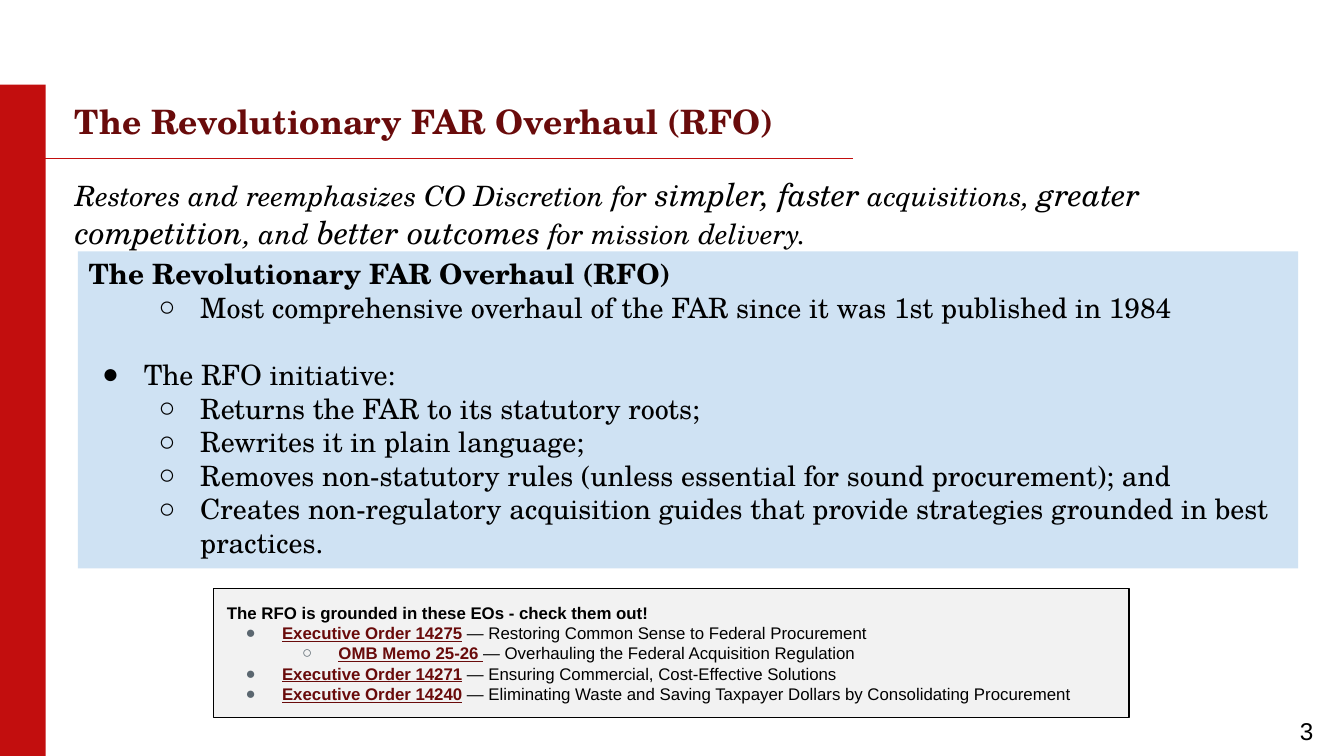
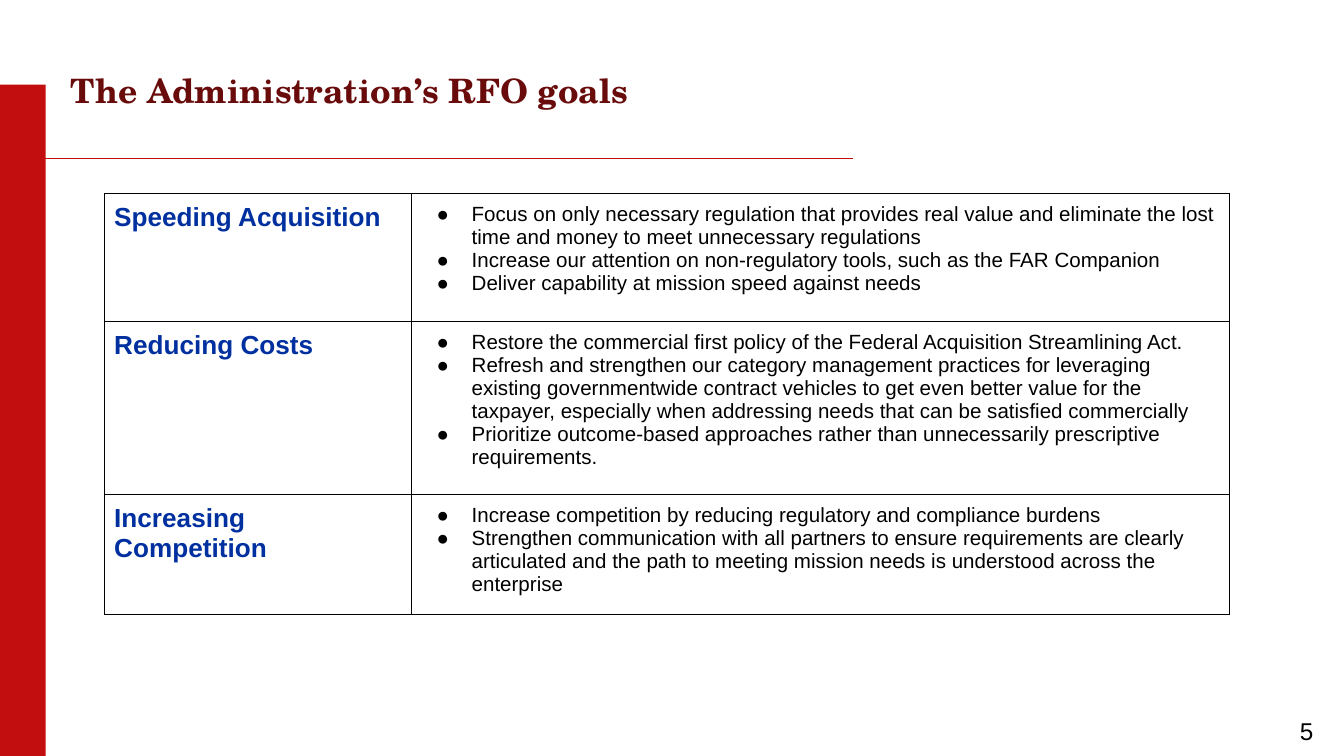
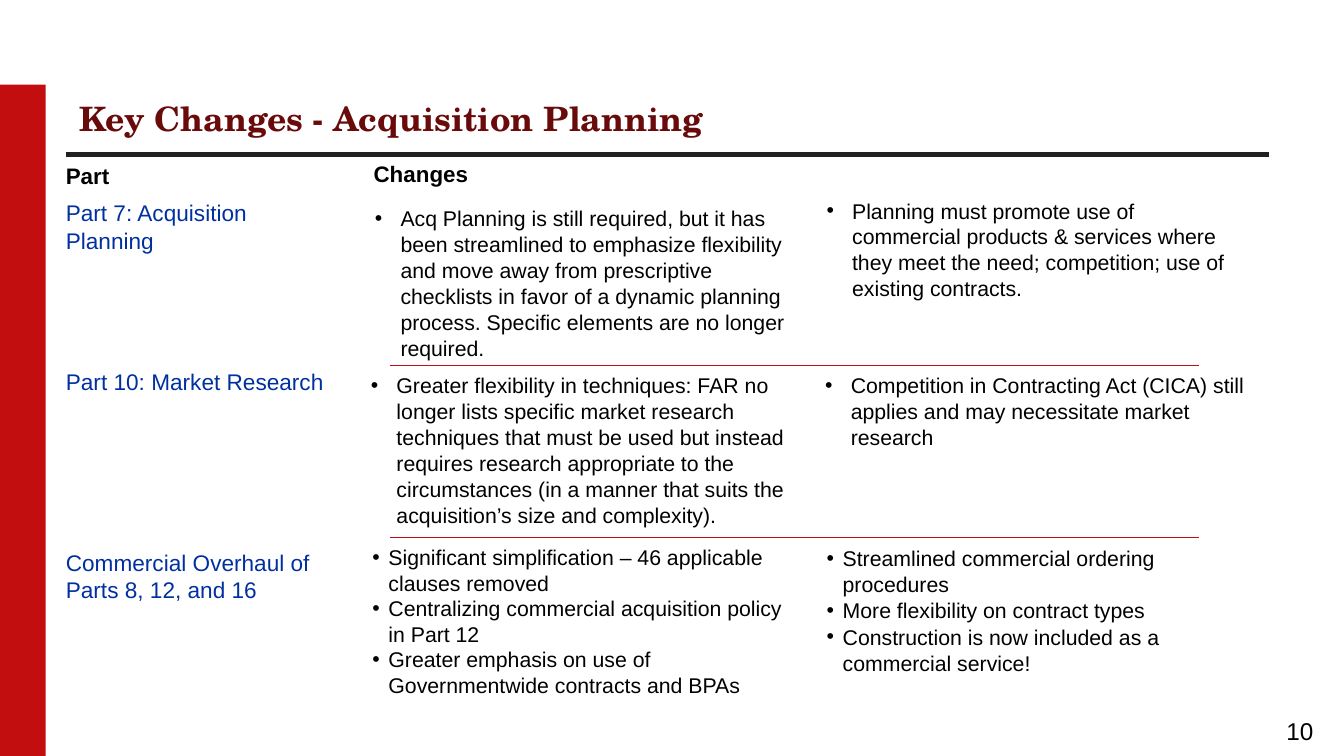
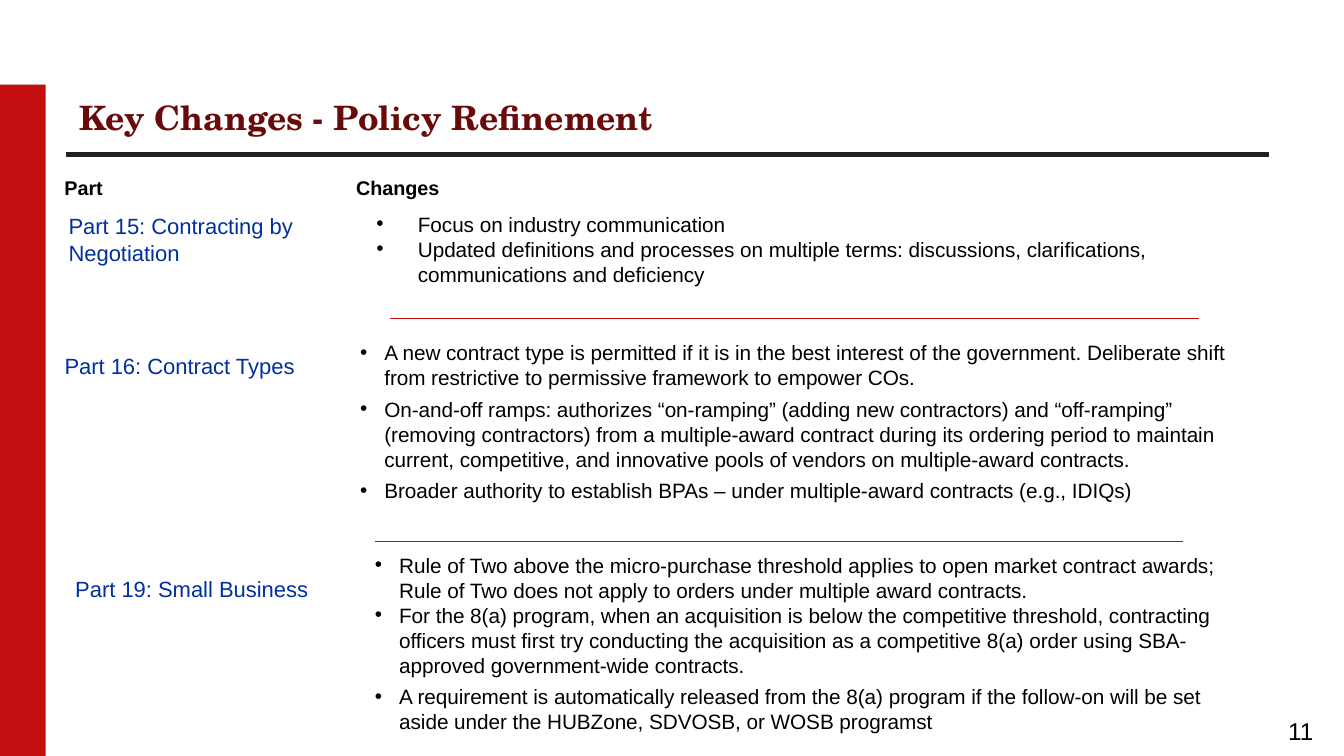
from dataclasses import dataclass

from lxml.etree import SubElement
from pptx import Presentation
from pptx.dml.color import RGBColor
from pptx.enum.shapes import MSO_CONNECTOR, MSO_SHAPE
from pptx.enum.text import MSO_ANCHOR, PP_ALIGN
from pptx.oxml.ns import qn
from pptx.util import Inches, Pt

SERIF, SANS = "TeX Gyre Schola", "Arial"
BLACK, RED, MAROON, BLUE = "000000", "C20E0E", "690B0B", "00309F"
SKY, MIST, SLATE, CHARCOAL = "CFE2F3", "F2F2F2", "5B6770", "212121"
TITLE_INSETS = (0.1, 0.1, 0.1, 0.1)
TIGHT = (0, 0, 0, 0)
LABEL_INSETS = (0, 0.01, 0, 0)


@dataclass
class Run:
    text: str
    size: float
    color: str = BLACK
    face: str = SANS
    bold: bool = False
    italic: bool = False
    underline: bool = False


@dataclass
class Para:
    runs: list
    bullet: str = ""
    left: float = 0
    hang: float = 0
    spacing: float = 0
    before: float = 0
    level: int = 0
    bullet_color: str = BLACK
    align: PP_ALIGN = PP_ALIGN.LEFT


def rgb(color):
    return RGBColor.from_string(color)


def add_bullet(paragraph, para):
    props = paragraph._p.get_or_add_pPr()
    props.set("marL", str(Inches(para.left)))
    props.set("indent", str(Inches(-para.hang)))
    tint = SubElement(props, qn("a:buClr"))
    SubElement(tint, qn("a:srgbClr")).set("val", para.bullet_color)
    SubElement(props, qn("a:buFont")).set("typeface", SANS)
    SubElement(props, qn("a:buChar")).set("char", para.bullet)


def write(frame, paras, insets, anchor=MSO_ANCHOR.TOP):
    frame.word_wrap = True
    frame.vertical_anchor = anchor
    (frame.margin_left, frame.margin_top,
     frame.margin_right, frame.margin_bottom) = map(Inches, insets)
    fill_paragraphs(frame, paras)


def fill_paragraphs(frame, paras):
    for index, para in enumerate(paras):
        paragraph = frame.add_paragraph() if index else frame.paragraphs[0]
        paragraph.alignment = para.align
        paragraph.level = para.level
        if para.bullet:
            add_bullet(paragraph, para)
        if para.spacing:
            paragraph.line_spacing = para.spacing
        if para.before:
            paragraph.space_before = Pt(para.before)
        for part in para.runs:
            run = paragraph.add_run()
            run.text = part.text
            font = run.font
            font.name, font.size = part.face, Pt(part.size)
            font.bold, font.italic, font.underline = part.bold, part.italic, part.underline
            font.color.rgb = rgb(part.color)


def add_text(slide, box, paras, insets=TIGHT, anchor=MSO_ANCHOR.TOP):
    frame = slide.shapes.add_textbox(*map(Inches, box)).text_frame
    write(frame, paras, insets, anchor)


def add_panel(slide, box, fill, outline=None):
    panel = slide.shapes.add_shape(MSO_SHAPE.RECTANGLE, *map(Inches, box))
    panel.shadow.inherit = False
    panel.fill.solid()
    panel.fill.fore_color.rgb = rgb(fill)
    if outline:
        panel.line.color.rgb = rgb(outline)
        panel.line.width = Pt(0.75)
    else:
        panel.line.fill.background()
    return panel.text_frame


def add_rule(slide, start, end, y, color=RED, width=0.75):
    rule = slide.shapes.add_connector(
        MSO_CONNECTOR.STRAIGHT, Inches(start), Inches(y), Inches(end), Inches(y))
    rule.line.color.rgb = rgb(color)
    rule.line.width = Pt(width)
    SubElement(rule._element.spPr, qn("a:effectLst"))


def add_page(deck, number, title, title_box):
    slide = deck.slides.add_slide(deck.slide_layouts[6])
    add_panel(slide, (0, 0.63, 0.34, 5), RED)
    add_text(slide, (9.27, 5.22, 0.6, 0.43),
             [Para([Run(number, 13)], align=PP_ALIGN.RIGHT)], TITLE_INSETS, MSO_ANCHOR.MIDDLE)
    add_text(slide, title_box, [Para([Run(title, 18, MAROON, SERIF, bold=True)])], TITLE_INSETS)
    return slide


def add_changes_page(deck, number, title, title_top):
    slide = add_page(deck, number, title, (0.49, title_top, 8.44, 0.63))
    add_rule(slide, 0.49, 9.44, 1.15, CHARCOAL, 2.36)
    return slide


def add_part_labels(slide, size, labels):
    for left, top, width, height, text in labels:
        add_text(slide, (left, top, width, height),
                 [Para([Run(text, size, BLUE)], spacing=1.01 if height > 0.3 else 0)],
                 LABEL_INSETS)


def heading(text, size):
    return Para([Run(text, size, bold=True)])


def dots(texts, size, hang, spacing=0, left=None):
    return [Para([Run(text, size)], "•", hang if left is None else left, hang, spacing)
            for text in texts]


def add_borders(cell, color, width):
    props = cell._tc.get_or_add_tcPr()
    for side in ("lnL", "lnR", "lnT", "lnB"):
        edge = SubElement(props, qn(f"a:{side}"), w=str(Pt(width)))
        fill = SubElement(edge, qn("a:solidFill"))
        SubElement(fill, qn("a:srgbClr")).set("val", color)


def fill_cell(cell, paras):
    add_borders(cell, BLACK, 0.56)
    cell.fill.background()
    cell.margin_left = cell.margin_top = cell.margin_right = cell.margin_bottom = Inches(0.07)
    fill_paragraphs(cell.text_frame, paras)


def overhaul_point(text, level=1, before=0):
    return Para([Run(text, 15, face=SERIF)], "○" if level else "●",
                0.83 if level else 0.41, 0.31, before=before, level=level)


def order_point(name, subject, level=0):
    return Para([Run(name, 9, MAROON, bold=True, underline=True), Run(subject, 9)],
                "○" if level else "●", 0.83 if level else 0.41, 0.27,
                level=level, bullet_color=SLATE)


def build_overhaul(deck):
    slide = add_page(deck, "3", "The Revolutionary FAR Overhaul (RFO)", (0.46, 0.65, 6.67, 0.63))
    add_rule(slide, 0.33, 6.35, 1.18)
    purpose = [
        ("Restores and reemphasizes CO Discretion for ", 15),
        ("simpler, faster", 17),
        (" acquisitions, ", 15),
        ("greater competition", 17),
        (", and ", 15),
        ("better outcomes", 17),
        (" for mission delivery.", 15),
    ]
    add_text(slide, (0.46, 1.2, 9.32, 3.97),
             [Para([Run(text, size, face=SERIF, italic=True) for text, size in purpose])],
             TITLE_INSETS)
    write(add_panel(slide, (0.58, 1.87, 9.08, 2.36), SKY), [
        Para([Run("The Revolutionary FAR Overhaul (RFO)", 15, face=SERIF, bold=True)]),
        overhaul_point("Most comprehensive overhaul of the FAR since it was 1st published in 1984"),
        overhaul_point("The RFO initiative:", level=0, before=18),
        overhaul_point("Returns the FAR to its statutory roots;"),
        overhaul_point("Rewrites it in plain language;"),
        overhaul_point("Removes non-statutory rules (unless essential for sound procurement); and"),
        overhaul_point("Creates non-regulatory acquisition guides that provide strategies "
                       "grounded in best practices."),
    ], (0.08, 0.04, 0.08, 0.04))
    write(add_panel(slide, (1.59, 4.38, 6.81, 0.96), MIST, BLACK), [
        heading("The RFO is grounded in these EOs - check them out!", 9),
        order_point("Executive Order 14275", " — Restoring Common Sense to Federal Procurement"),
        order_point("OMB Memo 25-26 ", "— Overhauling the Federal Acquisition Regulation", level=1),
        order_point("Executive Order 14271", " — Ensuring Commercial, Cost-Effective Solutions"),
        order_point("Executive Order 14240", " — Eliminating Waste and Saving Taxpayer Dollars "
                    "by Consolidating Procurement"),
    ], TITLE_INSETS, MSO_ANCHOR.MIDDLE)


def build_goals(deck):
    slide = add_page(deck, "5", "The Administration’s RFO goals", (0.43, 0.42, 8.44, 0.63))
    add_rule(slide, 0.33, 6.35, 1.18)
    goals = [
        ("Speeding Acquisition", 0.95, [
            "Focus on only necessary regulation that provides real value and eliminate the lost "
            "time and money to meet unnecessary regulations",
            "Increase our attention on non-regulatory tools, such as the FAR Companion",
            "Deliver capability at mission speed against needs",
        ]),
        ("Reducing Costs", 1.29, [
            "Restore the commercial first policy of the Federal Acquisition Streamlining Act.",
            "Refresh and strengthen our category management practices for leveraging existing "
            "governmentwide contract vehicles to get even better value for the taxpayer, "
            "especially when addressing needs that can be satisfied commercially",
            "Prioritize outcome-based approaches rather than unnecessarily prescriptive "
            "requirements.",
        ]),
        ("Increasing Competition", 0.89, [
            "Increase competition by reducing regulatory and compliance burdens",
            "Strengthen communication with all partners to ensure requirements are clearly "
            "articulated and the path to meeting mission needs is understood across the "
            "enterprise",
        ]),
    ]
    grid = slide.shapes.add_table(
        len(goals), 2, Inches(0.78), Inches(1.44), Inches(8.37), Inches(3.13)).table
    grid.first_row = grid.horz_banding = False
    for column, width in zip(grid.columns, (2.28, 6.09)):
        column.width = Inches(width)
    for row, (goal, height, actions) in zip(grid.rows, goals):
        row.height = Inches(height)
        goal_cell, action_cell = row.cells
        fill_cell(goal_cell, [Para([Run(goal, 14, BLUE, bold=True)])])
        fill_cell(action_cell, [Para([Run(action, 11)], "●", 0.38, 0.26, 1.01)
                                for action in actions])


def build_planning(deck):
    slide = add_changes_page(deck, "10", "Key Changes - Acquisition Planning", 0.63)
    add_text(slide, (0.49, 1.2, 0.87, 0.21), [heading("Part", 12)], LABEL_INSETS)
    add_part_labels(slide, 12.1, [
        (0.49, 1.47, 1.44, 0.42, "Part 7: Acquisition Planning"),
        (0.49, 2.73, 2.05, 0.21, "Part 10: Market Research"),
        (0.49, 4.07, 1.94, 0.42, "Commercial Overhaul of Parts 8, 12, and 16"),
    ])
    streamlined = dots([
        "Acq Planning is still required, but it has been streamlined to emphasize flexibility "
        "and move away from prescriptive checklists in favor of a dynamic planning process. "
        "Specific elements are no longer required.",
    ], 11.4, 0.19, 1.02, left=0.2)
    streamlined[0].before = 9.5
    add_text(slide, (2.78, 1.18, 3.22, 1.52), [heading("Changes", 12)] + streamlined, LABEL_INSETS)
    changes = [
        ((6.15, 1.47, 3.08, 0.78), 0.19, 1.01, [
            "Planning must promote use of commercial products & services where they meet the "
            "need; competition; use of existing contracts."]),
        ((2.76, 2.77, 3.25, 1.17), 0.19, 1.02, [
            "Greater flexibility in techniques: FAR no longer lists specific market research "
            "techniques that must be used but instead requires research appropriate to the "
            "circumstances (in a manner that suits the acquisition’s size and complexity)."]),
        ((6.14, 2.77, 3.12, 0.59), 0.19, 1.01, [
            "Competition in Contracting Act (CICA) still applies and may necessitate market "
            "research"]),
        ((2.77, 4.05, 3.18, 1.16), 0.12, 0, [
            "Significant simplification – 46 applicable clauses removed",
            "Centralizing commercial acquisition policy in Part 12",
            "Greater emphasis on use of Governmentwide contracts and BPAs"]),
        ((6.15, 4.05, 3.22, 0.99), 0.12, 1.03, [
            "Streamlined commercial ordering procedures",
            "More flexibility on contract types",
            "Construction is now included as a commercial service!"]),
    ]
    for box, hang, spacing, texts in changes:
        add_text(slide, box, dots(texts, 11.4, hang, spacing))
    for y in (2.72, 4):
        add_rule(slide, 2.9, 8.92, y)


def build_refinement(deck):
    slide = add_changes_page(deck, "11", "Key Changes - Policy Refinement", 0.62)
    add_rule(slide, 2.9, 8.92, 2.37)
    add_rule(slide, 2.79, 8.8, 4.03)
    add_text(slide, (0.48, 1.3, 0.9, 0.18), [heading("Part", 10.6)], LABEL_INSETS)
    add_part_labels(slide, 11.8, [
        (0.51, 1.57, 1.78, 0.4, "Part 15: Contracting by Negotiation"),
        (0.48, 2.61, 1.82, 0.2, "Part 16: Contract Types"),
        (0.56, 4.27, 1.82, 0.2, "Part 19: Small Business"),
    ])
    negotiation = dots([
        "Focus on industry communication",
        "Updated definitions and processes on multiple terms: discussions, clarifications, "
        "communications and deficiency",
    ], 11.05, 0.31, 1.01, left=0.46)
    negotiation[0].before = 6.2
    add_text(slide, (2.65, 1.25, 6.33, 0.89), [heading("Changes", 10.6)] + negotiation,
             (0, 0.06, 0, 0))
    contract_types = dots([
        "A new contract type is permitted if it is in the best interest of the government. "
        "Deliberate shift from restrictive to permissive framework to empower COs.",
        "On-and-off ramps: authorizes “on-ramping” (adding new contractors) and “off-ramping” "
        "(removing contractors) from a multiple-award contract during its ordering period to "
        "maintain current, competitive, and innovative pools of vendors on multiple-award "
        "contracts.",
        "Broader authority to establish BPAs – under multiple-award contracts (e.g., IDIQs)",
    ], 11.05, 0.18, 1.01)
    small_business = dots([
        "Rule of Two above the micro-purchase threshold applies to open market contract awards; "
        "Rule of Two does not apply to orders under multiple award contracts.",
        "For the 8(a) program, when an acquisition is below the competitive threshold, "
        "contracting officers must first try conducting the acquisition as a competitive 8(a) "
        "order using SBA-approved government-wide contracts.",
        "A requirement is automatically released from the 8(a) program if the follow-on will be "
        "set aside under the HUBZone, SDVOSB, or WOSB programst",
    ], 11.05, 0.18, 1.01)
    for point in contract_types[1:] + small_business[2:]:
        point.before = 3.5
    add_text(slide, (2.68, 2.53, 6.5, 1.23), contract_types)
    add_text(slide, (2.79, 4.11, 6.41, 1.37), small_business)


def main():
    deck = Presentation()
    deck.slide_width = Inches(10)
    deck.slide_height = deck.slide_width * 9 // 16
    for build in (build_overhaul, build_goals, build_planning, build_refinement):
        build(deck)
    deck.save("out.pptx")


if __name__ == "__main__":
    main()
